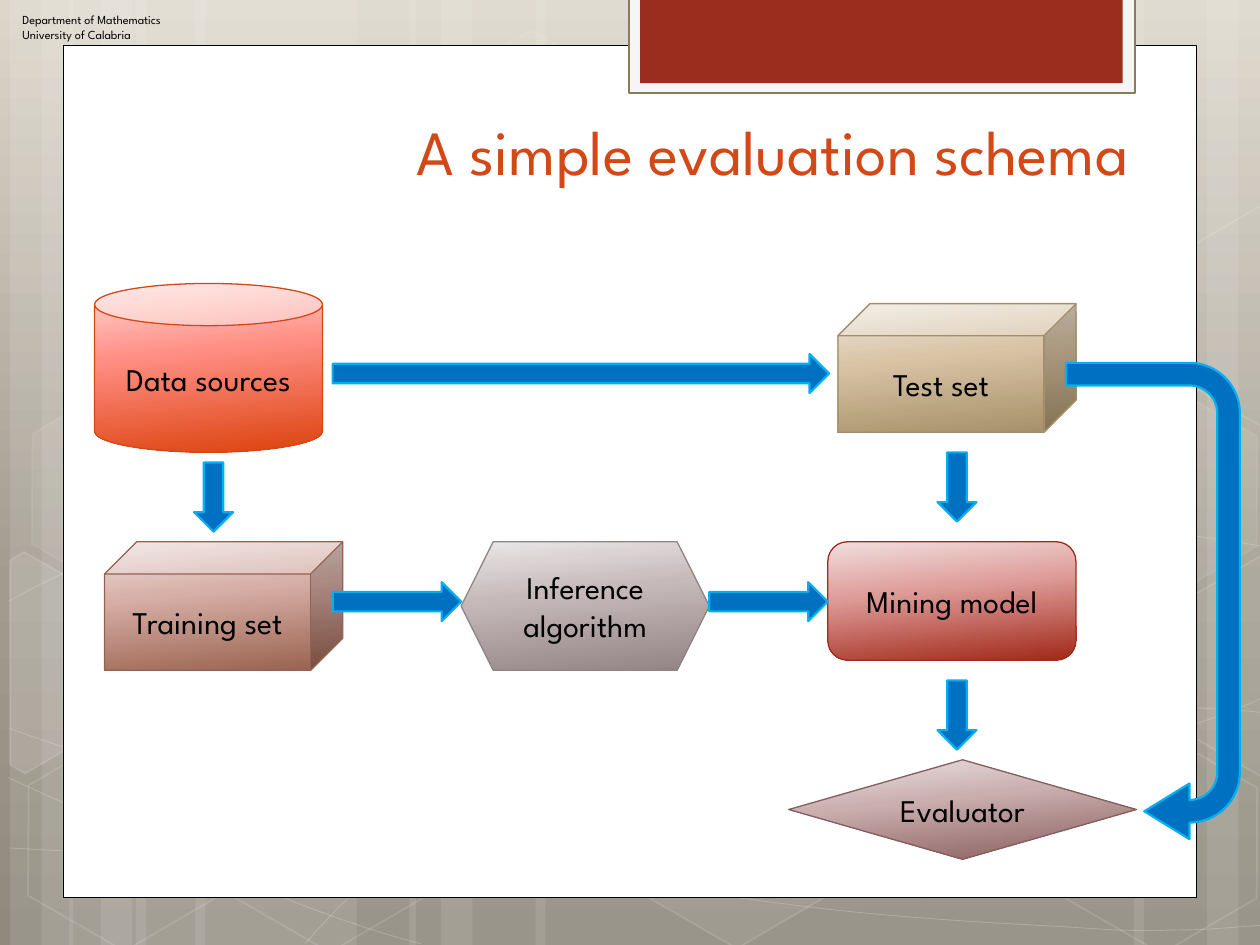
from typing import NamedTuple

from pptx import Presentation
from pptx.dml.color import RGBColor
from pptx.enum.shapes import MSO_SHAPE as Kind
from pptx.enum.text import MSO_ANCHOR as Anchor, PP_ALIGN as Align
from pptx.oxml import parse_xml
from pptx.oxml.ns import nsdecls
from pptx.util import Pt

UNIT = 9144  # one px is a hundredth of an inch
FONT = "League Spartan"
COLORS = {
    "white": "FFFFFF", "black": "000000", "frame": "F5F5F5", "tan": "8B7B57",
    "red": "9B2D1F", "title": "D34817", "blue": "0070C0", "sky": "00B0F0",
}
SKY = [(0, "DDD7CB"), (62, "A29C90"), (100, "8F8A7D")]


class Node(NamedTuple):
    label: str
    kind: Kind
    box: tuple[int, int, int, int]
    tones: tuple[str, str, str]
    edge: str


class Arrow(NamedTuple):
    kind: Kind
    box: tuple[int, int, int, int]


class Hexa(NamedTuple):
    left: int
    top: int
    fill: int  # opacity in percent, 0 for no fill
    line: int


class Cut(NamedTuple):
    points: list[tuple[int, int]]
    fill: int


BANDS = [(108, 175), (8, 50), (33, 83), (155, 175), (55, 50), (80, 83),
         (733, 175), (958, 50), (900, 83), (425, 308), (325, 50), (350, 83)]

# Each curve is a start point, then cubic steps of three points.
CURVES = [
    [(7, 673), (61, 676), (115, 679), (190, 678), (265, 677), (358, 675),
     (458, 665), (558, 655), (700, 636), (792, 617), (883, 598), (977, 568),
     (1007, 551)],
    [(7, 477), (36, 461), (65, 446), (121, 431), (178, 416), (259, 394),
     (347, 387), (436, 380), (544, 379), (654, 387), (764, 395), (947, 426),
     (1007, 434)],
    [(6, 617), (127, 672), (247, 727), (334, 749)],
    [(7, 578), (38, 589), (70, 600), (128, 616), (186, 631), (273, 656),
     (357, 673), (440, 690), (545, 708), (628, 718), (711, 729), (800, 733),
     (853, 736), (905, 740), (919, 738), (945, 738), (971, 737), (989, 735),
     (1007, 734)],
    [(242, 749), (260, 729), (278, 709), (302, 691), (326, 673), (360, 653),
     (388, 639), (416, 625), (433, 619), (470, 609), (506, 599), (573, 585),
     (608, 578), (644, 571), (649, 571), (680, 569), (711, 566), (760, 563),
     (794, 562), (829, 561), (886, 562), (886, 562), (908, 562), (931, 562),
     (953, 562), (971, 563), (988, 564), (997, 565), (1006, 566), (1003, 565),
     (1006, 566)],
]

HEXAS = [
    Hexa(334, 36, 4, 8), Hexa(497, 589, 6, 12), Hexa(11, 591, 0, 12),
    Hexa(14, 312, 7, 8), Hexa(174, 592, 0, 12), Hexa(753, 453, 10, 12),
    Hexa(834, 593, 0, 12), Hexa(834, 314, 7, 8),
]
CUTS = [
    Cut([(8, 445), (19, 438), (96, 482), (95, 570), (20, 614), (8, 607)], 10),
    Cut([(926, 485), (1001, 441), (1009, 446), (1009, 613), (1002, 617),
         (926, 573)], 4),
    Cut([(926, 207), (1001, 163), (1010, 168), (1009, 335), (1002, 339),
         (926, 295)], 0),
]

NODES = [
    Node("Data sources", Kind.CAN, (75, 225, 181, 134),
         ("FDDBD8", "FF8F85", "DC430E"), "D34817"),
    Node("Test set", Kind.CUBE, (665, 241, 189, 102),
         ("EFEAE3", "D9C4A6", "A58F67"), "A28E6A"),
    Node("Training set", Kind.CUBE, (83, 430, 189, 102),
         ("EDE3E1", "D6AEA5", "98604E"), "956251"),
    Node("Inference algorithm", Kind.HEXAGON, (366, 430, 197, 102),
         ("EAE7E8", "C6B9BA", "928384"), "918485"),
    Node("Mining model", Kind.ROUNDED_RECTANGLE, (657, 430, 197, 94),
         ("EFDFDE", "DF9D9A", "A12819"), "9B2D1F"),
    Node("Evaluator", Kind.DIAMOND, (626, 603, 276, 79),
         ("EAE3E3", "CBAFAF", "875B5B"), "855D5D"),
]
ARROWS = [
    Arrow(Kind.RIGHT_ARROW, (264, 281, 394, 31)),
    Arrow(Kind.DOWN_ARROW, (154, 367, 31, 55)),
    Arrow(Kind.RIGHT_ARROW, (264, 462, 102, 31)),
    Arrow(Kind.RIGHT_ARROW, (563, 462, 94, 31)),
    Arrow(Kind.DOWN_ARROW, (744, 359, 31, 55)),
    Arrow(Kind.DOWN_ARROW, (744, 540, 31, 55)),
]


def emu(*sizes: int) -> list[int]:
    return [size * UNIT for size in sizes]


def rgb(name: str) -> RGBColor:
    return RGBColor.from_string(COLORS.get(name, name))


def blend(fill, root, stops, angle: int) -> None:
    """Give fill, held in the XML element root, a gradient with any stops."""
    fill.gradient()
    fill.gradient_angle = 360 - angle
    group = root.xpath(".//a:gsLst")[0]
    group.clear()
    for place, tone in stops:
        group.append(parse_xml(
            f'<a:gs {nsdecls("a")} pos="{place * 1000}">'
            f'<a:srgbClr val="{tone}"/></a:gs>'))


def fade(shape, where: str, alpha: int) -> None:
    for color in shape.element.xpath(f"./p:spPr/{where}a:solidFill/a:srgbClr"):
        color.append(parse_xml(
            f'<a:alpha {nsdecls("a")} val="{alpha * 1000}"/>'))


def paint(shape, fill="", line="", width=0.0, clear=100, faint=100):
    """Set fill and line; clear and faint are their opacities in percent."""
    shape.shadow.inherit = False
    if fill:
        shape.fill.solid()
        shape.fill.fore_color.rgb = rgb(fill)
    else:
        shape.fill.background()
    if line:
        shape.line.color.rgb = rgb(line)
        shape.line.width = Pt(width)
    else:
        shape.line.fill.background()
    if clear < 100:
        fade(shape, "", clear)
    if faint < 100:
        fade(shape, "a:ln/", faint)
    return shape


def form(shapes, kind: Kind, box, **style):
    return paint(shapes.add_shape(kind, *emu(*box)), **style)


def trace(shapes, points, closed: bool, **style):
    spots = [emu(*point) for point in points]
    pen = shapes.build_freeform(*spots[0])
    pen.add_line_segments(spots[1:], close=closed)
    return paint(pen.convert_to_shape(), **style)


def bend(shape) -> None:
    """Turn every three line steps of an outline into one cubic step."""
    steps = shape.element.xpath(".//a:lnTo")
    for i in range(0, len(steps), 3):
        cubic = parse_xml(f'<a:cubicBezTo {nsdecls("a")}/>')
        steps[i].addprevious(cubic)
        for step in steps[i:i + 3]:
            cubic.append(step[0])
            step.getparent().remove(step)


def write(shape, text: str, size=18, color="black", align=Align.CENTER,
          anchor=Anchor.MIDDLE) -> None:
    frame = shape.text_frame
    frame.text = text
    frame.word_wrap = True
    frame.vertical_anchor = anchor
    for para in frame.paragraphs:
        para.alignment = align
        para.font.name = FONT
        para.font.size = Pt(size)
        para.font.color.rgb = rgb(color)


def decor(shapes) -> None:
    for left, width in BANDS:
        form(shapes, Kind.RECTANGLE, (left, 0, width, 750), fill="white", clear=10)
    for curve in CURVES:
        bend(trace(shapes, curve, False, line="white", width=0.5, faint=20))
    for left, top, fill, line in HEXAS:
        cell = form(shapes, Kind.HEXAGON, (left, top, 175, 152), clear=fill,
                    fill="white" if fill else "", line="white", width=1, faint=line)
        cell.adjustments[0] = 0.285
        cell.rotation = 30
    for points, fill in CUTS:
        trace(shapes, points, True, fill="white" if fill else "", clear=fill,
              line="white", width=1, faint=12)


def scene(slide, master) -> None:
    """Draw the backdrop, then move it to the slide master."""
    blend(master.background.fill, master.element, SKY, 90)
    shapes = slide.shapes
    back = shapes.add_group_shape()
    decor(back.shapes)
    panel = form(shapes, Kind.RECTANGLE, (50, 36, 900, 676), fill="white",
                 line="black", width=0.5)
    frame = form(shapes, Kind.RECTANGLE, (499, -2, 402, 76), fill="frame",
                 line="tan", width=1.25)
    tab = form(shapes, Kind.RECTANGLE, (508, -2, 383, 68), fill="red")
    badge = shapes.add_group_shape()
    write(badge.shapes.add_textbox(*emu(8, 5, 220, 34)),
          "Department of Mathematics\nUniversity of Calabria",
          size=7, align=Align.LEFT, anchor=Anchor.TOP)
    tree = master.element.xpath("./p:cSld/p:spTree")[0]
    for part in (back, panel, frame, tab, badge):
        tree.append(part.element)
    for number, mark in enumerate(tree.xpath(".//p:cNvPr"), 1):
        mark.set("id", str(number))


def head(slide) -> None:
    title = slide.shapes.title
    title.left, title.top, title.width, title.height = emu(138, 84, 768, 125)
    write(title, "A simple evaluation schema", size=36, color="title",
          align=Align.RIGHT, anchor=Anchor.TOP)


def flow(shapes) -> None:
    for label, kind, box, tones, edge in NODES:
        node = form(shapes, kind, box, line=edge, width=0.75)
        blend(node.fill, node.element, zip((0, 40, 100), tones), 84)
        write(node, label)
    style = dict(fill="blue", line="sky", width=1.25)
    for kind, box in ARROWS:
        form(shapes, kind, box, **style)
    turn = form(shapes, Kind.U_TURN_ARROW, (726, 408, 378, 138), **style)
    turn.rotation = 90
    for i, value in enumerate((0.13, 0.16, 0.26, 0.38, 0.55)):
        turn.adjustments[i] = value


def main() -> None:
    deck = Presentation()
    deck.slide_width, deck.slide_height = emu(1000, 750)
    slide = deck.slides.add_slide(deck.slide_layouts[5])
    scene(slide, deck.slide_master)
    head(slide)
    flow(slide.shapes)
    deck.save("out.pptx")


if __name__ == "__main__":
    main()
